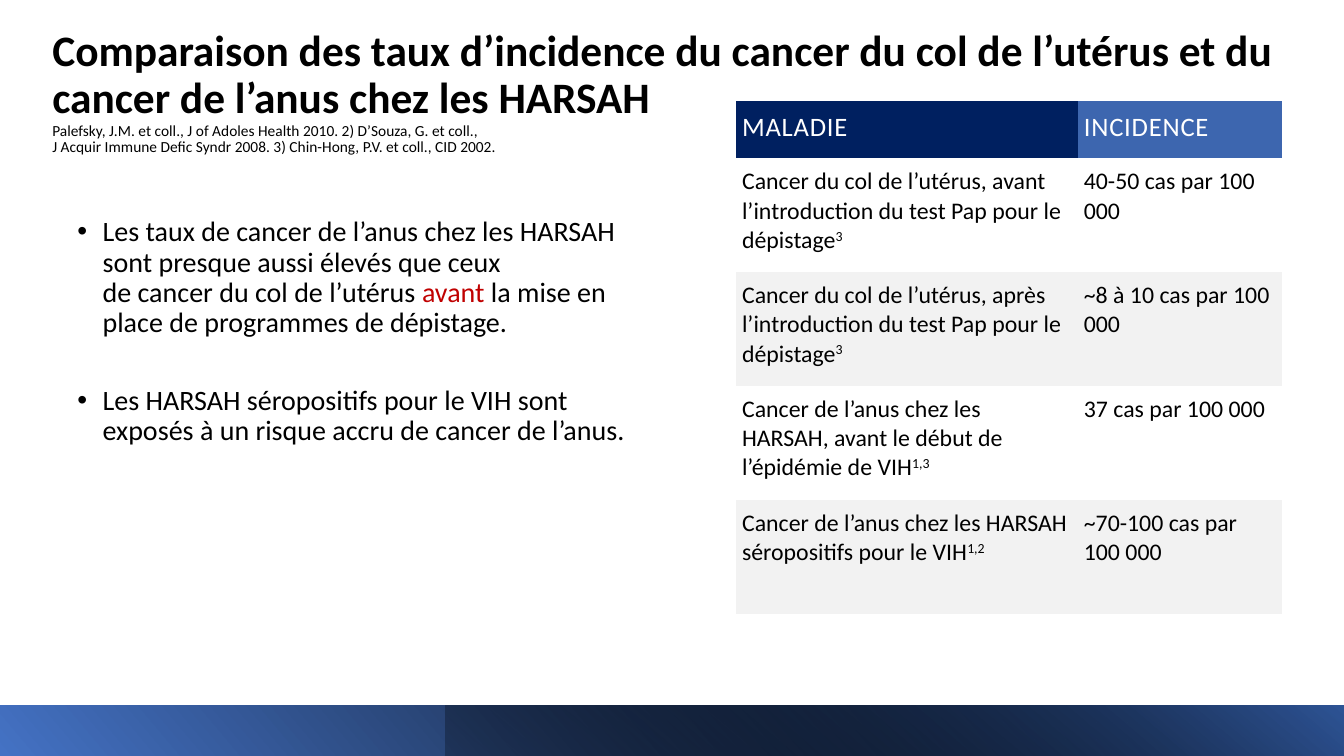
from typing import NamedTuple

from lxml import etree
from pptx import Presentation
from pptx import util as u
from pptx.dml.color import RGBColor
from pptx.enum import shapes, text
from pptx.oxml import ns

FONT = "Calibri"
BLACK, WHITE, RED = "000000", "FFFFFF", "C00000"
NO_TABLE_STYLE = "{2D5ABB26-0587-4C30-8999-92F81FD0307C}"


class Run(NamedTuple):
    text: str
    color: str = BLACK
    superscript: bool = False


class Stop(NamedTuple):
    position: float
    color: str
    opacity: int = 100


class Band(NamedTuple):
    left: float
    width: float
    angle: float
    stops: tuple[Stop, Stop]


class Row(NamedTuple):
    disease: str
    references: str
    incidence: str


CITATIONS = (
    "Palefsky, J.M. et coll., J of Adoles Health 2010. 2) D’Souza, G. et coll.,",
    "J Acquir Immune Defic Syndr 2008. 3) Chin-Hong, P.V. et coll., CID 2002.",
)
BULLETS = (
    (Run("Les taux de cancer de l’anus chez les HARSAH sont presque aussi élevés que ceux\n"
         "de cancer du col de l’utérus "),
     Run("avant ", RED),
     Run("la mise en place de programmes de dépistage.")),
    (Run("Les HARSAH séropositifs pour le VIH sont exposés à un risque accru "
         "de cancer de l’anus."),),
)
BANDS = (
    Band(0, 13.33, 40, (Stop(0, "4472C4"), Stop(0.85, BLACK))),
    Band(4.42, 8.91, 50, (Stop(0, BLACK, 26), Stop(1, "2F5597"))),
)
HEADERS = (("MALADIE", "002060"), ("INCIDENCE", "3D66AF"))
ROWS = (
    Row("Cancer du col de l’utérus, avant l’introduction du test Pap pour le dépistage",
        "3", "40-50 cas par 100 000"),
    Row("Cancer du col de l’utérus, après l’introduction du test Pap pour le dépistage",
        "3", "~8 à 10 cas par 100 000"),
    Row("Cancer de l’anus chez les HARSAH, avant le début de l’épidémie de VIH",
        "1,3", "37 cas par 100 000"),
    Row("Cancer de l’anus chez les HARSAH séropositifs pour le VIH",
        "1,2", "~70-100 cas par 100 000"),
)


def rgb(color: str) -> RGBColor:
    return RGBColor.from_string(color)


def write(paragraph, runs, *, size: float, bold: bool = False,
          line_spacing: float = 1.0, after: float = 0, tracking: int = 0) -> None:
    """Fill a paragraph with formatted runs; a newline becomes a line break."""
    paragraph.line_spacing = line_spacing
    paragraph.space_before = u.Pt(0)
    paragraph.space_after = u.Pt(after)
    for part in runs:
        for index, line in enumerate(part.text.split("\n")):
            if index:
                paragraph.add_line_break()
            run = paragraph.add_run()
            run.text = line
            run.font.name = FONT
            run.font.size = u.Pt(size)
            run.font.bold = bold
            run.font.color.rgb = rgb(part.color)
            if part.superscript:
                run.font._element.set("baseline", "30000")
            if tracking:
                run.font._element.set("spc", str(tracking))


def add_text_frame(slide, left: float, top: float, width: float, height: float):
    box = slide.shapes.add_textbox(
        u.Inches(left), u.Inches(top), u.Inches(width), u.Inches(height))
    box.text_frame.word_wrap = True
    return box.text_frame


def add_bullet(paragraph) -> None:
    properties = paragraph._p.get_or_add_pPr()
    properties.set("marL", str(u.Inches(0.31)))
    properties.set("indent", str(u.Inches(-0.25)))
    etree.SubElement(properties, ns.qn("a:buFont")).set("typeface", "Arial")
    etree.SubElement(properties, ns.qn("a:buChar")).set("char", "•")


def add_band(slide, band: Band) -> None:
    shape = slide.shapes.add_shape(
        shapes.MSO_SHAPE.RECTANGLE, u.Inches(band.left), u.Inches(7),
        u.Inches(band.width), u.Inches(0.5))
    shape.shadow.inherit = False
    shape.line.fill.background()
    shape.fill.gradient()
    shape.fill.gradient_angle = band.angle
    for target, stop in zip(shape.fill.gradient_stops, band.stops):
        target.position = stop.position
        target.color.rgb = rgb(stop.color)
    # Opacity of each gradient stop
    colors = shape._element.spPr.iter(ns.qn("a:srgbClr"))
    for element, stop in zip(colors, band.stops):
        if stop.opacity < 100:
            etree.SubElement(element, ns.qn("a:alpha")).set("val", str(stop.opacity * 1000))


def fill_cell(cell, runs, *, fill: str, size: float, tracking: int = 0,
              anchor=text.MSO_ANCHOR.TOP) -> None:
    cell.fill.solid()
    cell.fill.fore_color.rgb = rgb(fill)
    cell.vertical_anchor = anchor
    cell.margin_left, cell.margin_right = u.Inches(0.06), u.Inches(0.09)
    cell.margin_top, cell.margin_bottom = u.Inches(0.09), u.Inches(0.13)
    write(cell.text_frame.paragraphs[0], runs, size=size, tracking=tracking)


def add_incidence_table(slide) -> None:
    frame = slide.shapes.add_table(
        len(ROWS) + 1, len(HEADERS), u.Inches(7.3), u.Inches(1),
        u.Inches(5.42), u.Inches(5.08))
    table = frame.table
    table.first_row = table.horz_banding = False
    table._tbl.tblPr.find(ns.qn("a:tableStyleId")).text = NO_TABLE_STYLE
    for column, width in zip(table.columns, (3.39, 2.03)):
        column.width = u.Inches(width)
    for index, row in enumerate(table.rows):
        row.height = u.Inches(1.13 if index else 0.57)

    for column, (label, fill) in enumerate(HEADERS):
        fill_cell(table.cell(0, column), [Run(label, WHITE)], fill=fill, size=19,
                  tracking=60, anchor=text.MSO_ANCHOR.MIDDLE)
    for index, row in enumerate(ROWS, start=1):
        fill = WHITE if index % 2 else "F2F2F2"
        disease = [Run(row.disease), Run(row.references, superscript=True)]
        fill_cell(table.cell(index, 0), disease, fill=fill, size=17)
        fill_cell(table.cell(index, 1), [Run(row.incidence)], fill=fill, size=17)


def main() -> None:
    presentation = Presentation()
    presentation.slide_width = u.Inches(13.33)
    presentation.slide_height = u.Inches(7.5)
    slide = presentation.slides.add_slide(presentation.slide_layouts[6])

    # Title and citations
    title = add_text_frame(slide, 0.42, 0.24, 12.55, 1.63)
    write(title.paragraphs[0],
          [Run("Comparaison des taux d’incidence du cancer du col de l’utérus et du "
               "cancer de l’anus chez les HARSAH")],
          size=31, bold=True, line_spacing=0.9)
    for citation in CITATIONS:
        write(title.add_paragraph(), [Run(citation)], size=11, line_spacing=0.9)

    # Key points
    points = add_text_frame(slide, 0.61, 2.11, 5.93, 4.41)
    for index, runs in enumerate(BULLETS):
        paragraph = points.add_paragraph() if index else points.paragraphs[0]
        add_bullet(paragraph)
        write(paragraph, runs, size=20, line_spacing=0.9, after=34)

    # Footer bands
    for band in BANDS:
        add_band(slide, band)

    # Incidence table
    add_incidence_table(slide)

    presentation.save("out.pptx")


if __name__ == "__main__":
    main()
